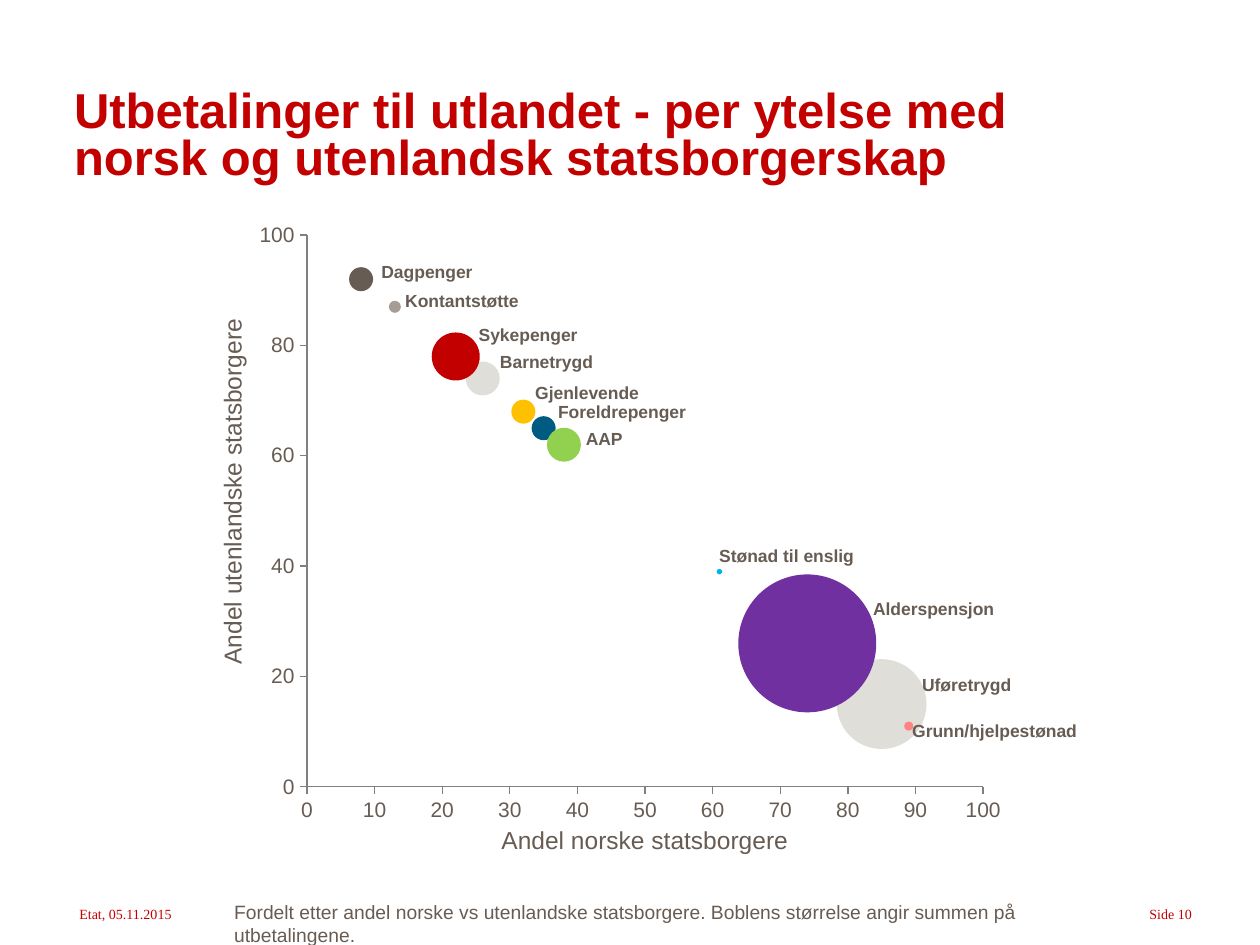
import pptx
import pptx.chart.data
import pptx.dml.color
import pptx.enum.chart
import pptx.enum.text
import pptx.oxml
import pptx.oxml.ns
import pptx.util

Cm, Pt = pptx.util.Cm, pptx.util.Pt
RGB = pptx.dml.color.RGBColor
ALIGN = pptx.enum.text.PP_ALIGN
FIT = pptx.enum.text.MSO_AUTO_SIZE

RED = RGB(0xC3, 0x00, 0x00)
BROWN = RGB(0x67, 0x5C, 0x53)
TAUPE = RGB(0xA5, 0x9D, 0x95)
STONE = RGB(0xE0, 0xDE, 0xD8)
NAVY = RGB(0x00, 0x5B, 0x82)
SKY = RGB(0x00, 0xB0, 0xF0)
GREEN = RGB(0x92, 0xD0, 0x50)
PINK = RGB(0xFF, 0x81, 0x81)
PURPLE = RGB(0x70, 0x30, 0xA0)
GOLD = RGB(0xFF, 0xC0, 0x00)
GREY = RGB(0x80, 0x80, 0x80)

# name, Norwegian share, foreign share, sum paid, colour, label left, top, width
BENEFITS = [
    ("Kontantstøtte", 13, 87, 25, TAUPE, 7.92, 5.72, 2.84),
    ("Barnetrygd", 26, 74, 200, STONE, 9.83, 6.96, 2.41),
    ("Foreldrepenger", 35, 65, 100, NAVY, 11, 7.95, 3.12),
    ("Dagpenger", 8, 92, 100, BROWN, 7.44, 5.13, 2.36),
    ("Stønad til enslig", 61, 39, 5, SKY, 14.25, 10.87, 3.25),
    ("Sykepenger", 22, 78, 400, RED, 9.4, 6.4, 2.51),
    ("AAP", 38, 62, 200, GREEN, 11.56, 8.51, 1.27),
    ("Uføretrygd", 85, 15, 1400, STONE, 18.34, 13.46, 2.34),
    ("Grunn/hjelpestønad", 89, 11, 14, PINK, 18.14, 14.38, 3.86),
    ("Alderspensjon", 74, 26, 3300, PURPLE, 17.35, 11.94, 2.97),
    ("Gjenlevende", 32, 68, 100, GOLD, 10.54, 7.57, 2.62),
]


class Page:
    def __init__(self, slide, font="Arial", color=BROWN):
        self.slide = slide
        self.font = font
        self.color = color

    def style(self, font, size, bold=False, color=None, name=None):
        font.name = name or self.font
        font.size = Pt(size)
        font.bold = bold
        font.color.rgb = color or self.color

    def title(self, text, box):
        shape = self.slide.shapes.title
        shape.left, shape.top, shape.width, shape.height = map(Cm, box)
        frame = shape.text_frame
        frame.text = text
        frame.auto_size = FIT.NONE
        frame.vertical_anchor = pptx.enum.text.MSO_ANCHOR.BOTTOM
        para = frame.paragraphs[0]
        para.alignment = ALIGN.LEFT
        para.line_spacing = 0.8
        self.style(para.font, 28, True, RED)

    def text(self, text, box, size, wrap=False, align=ALIGN.LEFT, turn=0, **look):
        shape = self.slide.shapes.add_textbox(*map(Cm, box))
        shape.rotation = turn
        frame = shape.text_frame
        frame.text = text
        frame.word_wrap = wrap
        frame.auto_size = FIT.NONE if wrap else FIT.SHAPE_TO_FIT_TEXT
        para = frame.paragraphs[0]
        para.alignment = align
        self.style(para.font, size, **look)

    def axis(self, axis, step):
        axis.minimum_scale, axis.maximum_scale = 0, 100
        axis.major_unit = step
        axis.has_major_gridlines = False
        axis.has_title = False
        axis.major_tick_mark = pptx.enum.chart.XL_TICK_MARK.OUTSIDE
        axis.format.line.color.rgb = GREY
        axis.format.line.width = Pt(0.75)
        self.style(axis.tick_labels.font, 12)

    def chart(self, rows, box):
        data = pptx.chart.data.BubbleChartData()
        series = data.add_series("Series 1")
        for _, x, y, size, *_ in rows:
            series.add_data_point(x, y, size)
        kind = pptx.enum.chart.XL_CHART_TYPE.BUBBLE
        chart = self.slide.shapes.add_chart(kind, *map(Cm, box), data).chart
        chart.has_title = chart.has_legend = False
        self.style(chart.font, 12)
        self.axis(chart.category_axis, 10)
        self.axis(chart.value_axis, 20)
        plot = chart.plots[0]
        plot.bubble_scale = 100
        series = plot.series[0]
        series.format.fill.solid()
        series.format.fill.fore_color.rgb = STONE
        for i, row in enumerate(rows):
            fill = series.points[i].format.fill
            fill.solid()
            fill.fore_color.rgb = row[4]
        self.layout(chart, x=0.08, y=0.04, w=0.88, h=0.89)

    def layout(self, chart, **parts):
        """Fix the inner plot area as fractions of the chart."""
        area = chart.plots[0]._element.getparent()
        for old in area.findall(pptx.oxml.ns.qn("c:layout")):
            area.remove(old)
        modes = "".join(f'<c:{k}Mode val="edge"/>' for k in "xy")
        sizes = "".join(f'<c:{k} val="{v}"/>' for k, v in parts.items())
        area.insert(0, pptx.oxml.parse_xml(
            f'<c:layout {pptx.oxml.ns.nsdecls("c")}><c:manualLayout>'
            f'<c:layoutTarget val="inner"/>{modes}{sizes}'
            '</c:manualLayout></c:layout>'))


def main():
    deck = pptx.Presentation()
    deck.slide_width, deck.slide_height = Cm(25.4), Cm(19.05)
    page = Page(deck.slides.add_slide(deck.slide_layouts[5]))

    foot = dict(color=RED, name="Times New Roman")
    page.text("Etat, 05.11.2015", (1.35, 18.14, 2.54, 0.58), 8, **foot)
    page.text("Side 10", (22.86, 18.14, 1.42, 0.58), 8, align=ALIGN.RIGHT, **foot)
    page.title("Utbetalinger til utlandet - per ytelse med norsk og "
               "utenlandsk statsborgerskap", (1.24, 0.71, 20.17, 3.15))
    page.chart(BENEFITS, (4.95, 4.24, 15.49, 12.5))
    page.text("Andel norske statsborgere", (9.86, 16.51, 6.32, 0.86), 14)
    page.text("Andel utenlandske statsborgere", (0.94, 9.47, 7.49, 0.86), 14, turn=270)
    for name, *_, left, top, width in BENEFITS:
        page.text(name, (left, top, width, 0.69), 10, bold=True)
    page.text("Fordelt etter andel norske vs utenlandske statsborgere. "
              "Boblens størrelse angir summen på utbetalingene.",
              (4.47, 18.03, 18.5, 0.74), 11, wrap=True)
    deck.save("out.pptx")


if __name__ == "__main__":
    main()
